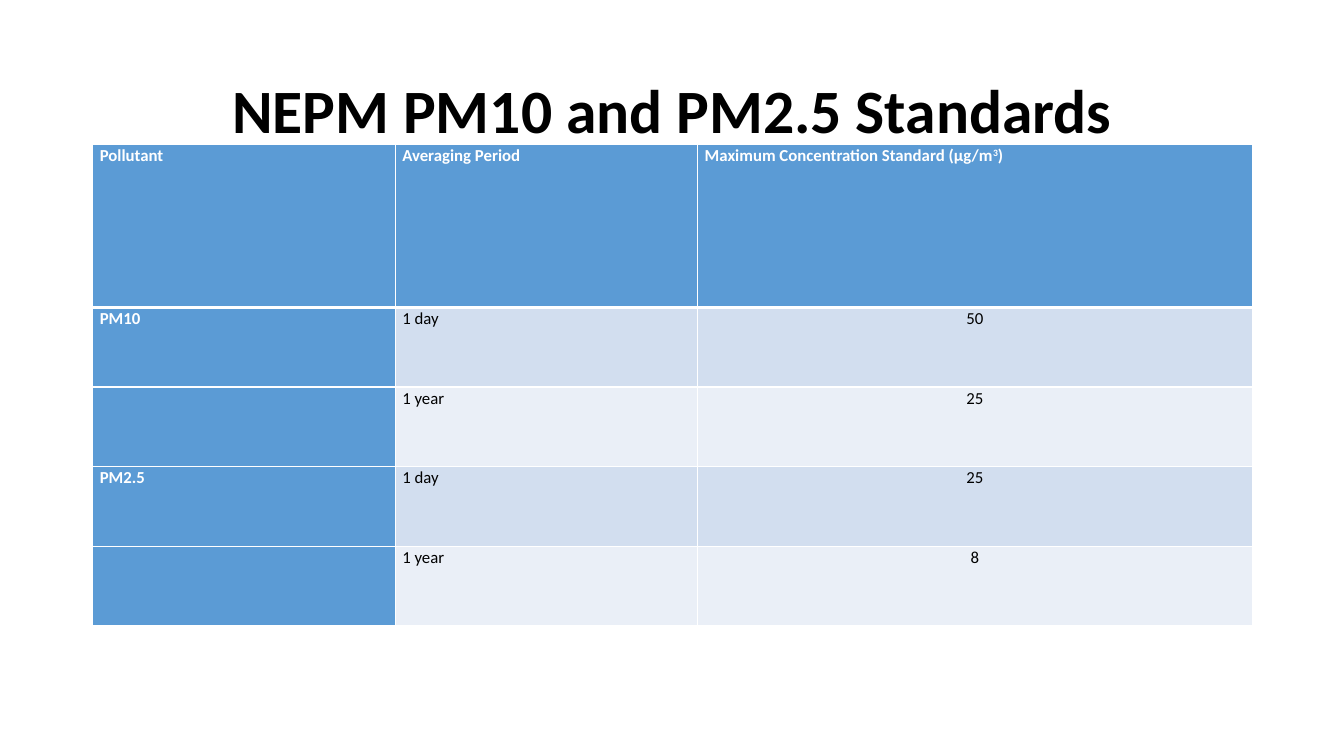
from dataclasses import dataclass

from lxml import etree
from pptx import Presentation
from pptx import util as u
from pptx.dml import color
from pptx.enum import text
from pptx.oxml import ns

HUES = {
    "head": "5B9BD5",
    "odd": "D2DEEF",
    "even": "EAEFF7",
    "ink": "000000",
    "white": "FFFFFF",
}
LEFT, WIDTH = 0.92, 11.5
COLS = (3, 3, 5.5)
ROWS = (1.62,) + (0.79,) * 4
DATA = (
    ("Pollutant", "Averaging Period", "Maximum Concentration Standard (µg/m^3^)"),
    ("PM10", "1 day", "50"),
    ("", "1 year", "25"),
    ("PM2.5", "1 day", "25"),
    ("", "1 year", "8"),
)
PAD = {
    "margin_left": u.Inches(0.07),
    "margin_right": u.Inches(0.07),
    "margin_top": 0,
    "margin_bottom": 0,
}
BOX = {"word_wrap": True, "vertical_anchor": text.MSO_ANCHOR.MIDDLE}


@dataclass(frozen=True)
class Style:
    size: float
    hue: str
    bold: bool
    align: text.PP_ALIGN
    space: float


@dataclass(frozen=True)
class Cell:
    row: int
    col: int
    words: str
    fill: str
    style: Style


def apply(item, values: dict) -> None:
    for name, value in values.items():
        setattr(item, name, value)


def write(frame, words: str, style: Style) -> None:
    para = frame.paragraphs[0]
    apply(para, {"alignment": style.align, "line_spacing": style.space})
    look = {"name": "Calibri", "size": u.Pt(style.size), "bold": style.bold}
    apply(para.font, look)
    for i, part in enumerate(words.split("^")):
        if not part:
            continue
        run = para.add_run()
        run.text = part
        apply(run.font, look)
        run.font.color.rgb = color.RGBColor.from_string(HUES[style.hue])
        if i % 2:
            run.font._element.set("baseline", "30000")


def edge(cell, side: str, width: float) -> None:
    props = cell._tc.get_or_add_tcPr()
    line = etree.SubElement(props, ns.qn(f"a:ln{side}"), w=str(u.Pt(width)))
    fill = etree.SubElement(line, ns.qn("a:solidFill"))
    etree.SubElement(fill, ns.qn("a:srgbClr"), val=HUES["white"])


def plan(row: int, col: int, words: str) -> Cell:
    head = row == 0 or col == 0
    fill = "head" if head else "odd" if row % 2 else "even"
    mid = row > 0 and col == 2
    align = text.PP_ALIGN.CENTER if mid else text.PP_ALIGN.LEFT
    style = Style(12, "white" if head else "ink", head, align, 1.07)
    return Cell(row, col, words, fill, style)


def draw(table, item: Cell) -> None:
    cell = table.cell(item.row, item.col)
    apply(cell, PAD)
    for side in "LRTB":
        thick = (item.row, side) in ((0, "B"), (1, "T"))
        edge(cell, side, 3 if thick else 1)
    cell.fill.solid()
    cell.fill.fore_color.rgb = color.RGBColor.from_string(HUES[item.fill])
    write(cell.text_frame, item.words, item.style)


def main() -> None:
    deck = Presentation()
    apply(deck, {"slide_width": u.Inches(13.33), "slide_height": u.Inches(7.5)})
    slide = deck.slides.add_slide(deck.slide_layouts[6])

    title = slide.shapes.add_textbox(
        u.Inches(LEFT), u.Inches(0.4), u.Inches(WIDTH), u.Inches(1.45)
    ).text_frame
    apply(title, BOX)
    bold = Style(44, "ink", True, text.PP_ALIGN.CENTER, 0.9)
    write(title, "NEPM PM10 and PM2.5 Standards", bold)

    table = slide.shapes.add_table(
        len(ROWS), len(COLS), u.Inches(LEFT), u.Inches(1.43),
        u.Inches(WIDTH), u.Inches(sum(ROWS)),
    ).table
    apply(table, {"first_col": True})
    for col, width in zip(table.columns, COLS):
        col.width = u.Inches(width)
    for row, height in zip(table.rows, ROWS):
        row.height = u.Inches(height)
    for r, line in enumerate(DATA):
        for c, words in enumerate(line):
            draw(table, plan(r, c, words))

    deck.save("out.pptx")


if __name__ == "__main__":
    main()
